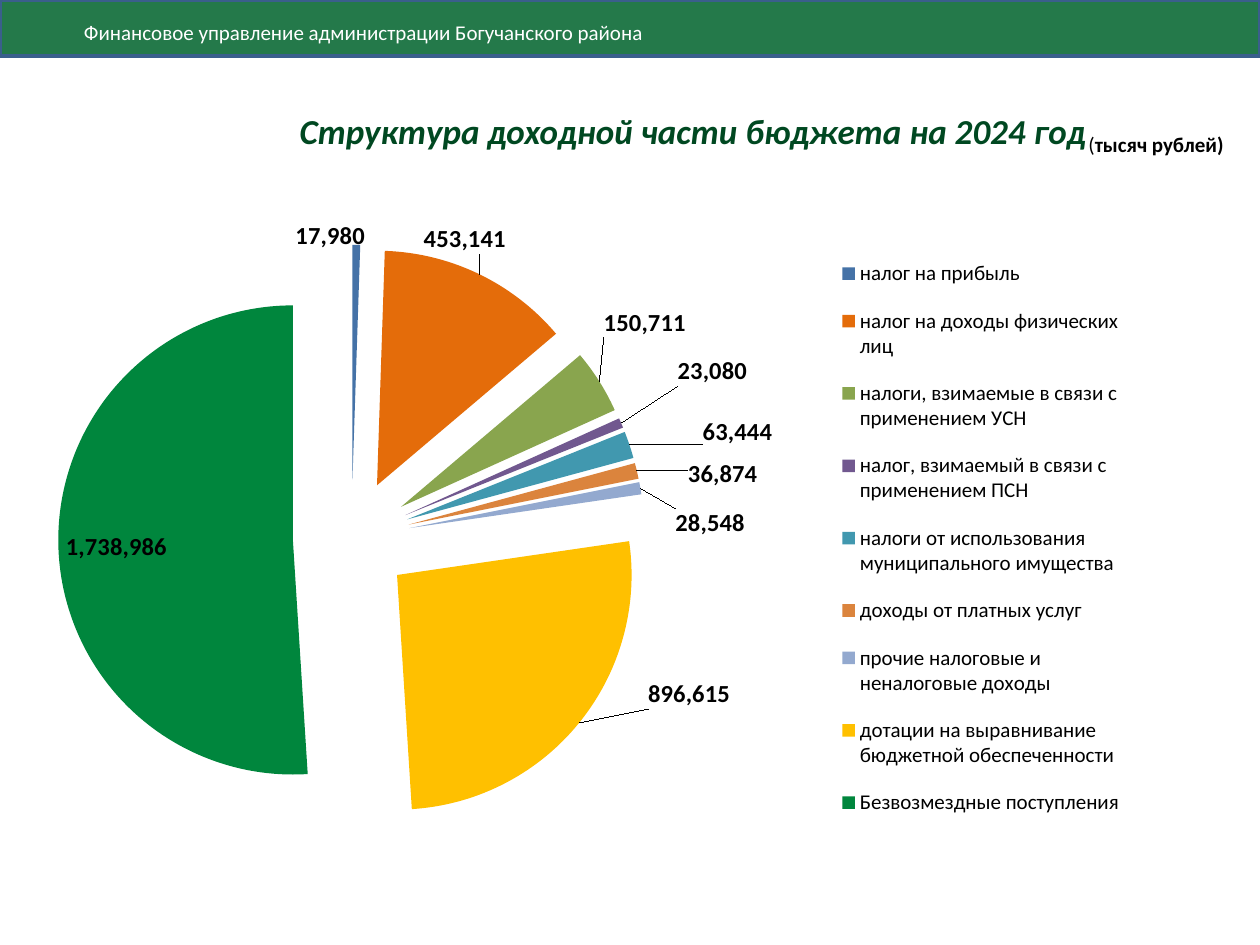
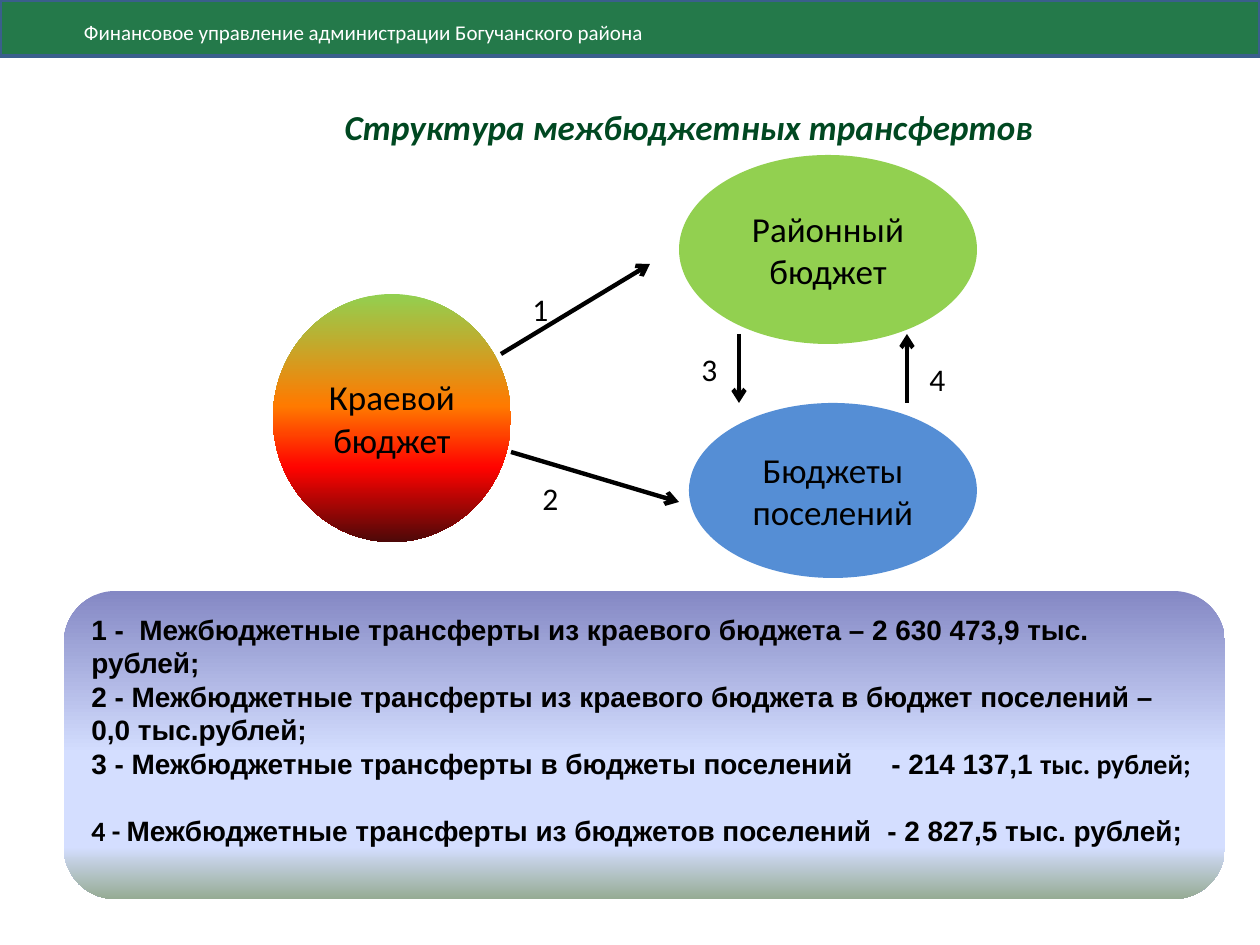
"""Build two budget slides: the revenue pie and the transfer diagram."""
from typing import NamedTuple

from lxml import etree
from pptx import Presentation
from pptx import util as u
from pptx.chart.data import CategoryChartData
from pptx.dml.color import RGBColor
from pptx.enum import chart as charts, shapes, text
from pptx.oxml import parse_xml
from pptx.oxml.ns import nsdecls, qn

PX = 914400 / 126
PAGE_SIZE = (1260, 945)
CALIBRI, ARIAL = "Calibri", "Arial"
BLACK, WHITE = "000000", "FFFFFF"
BAND_GREEN, BAND_EDGE, TITLE_GREEN = "00642D", "3A5F8C", "004821"
CENTER, LEFT = text.PP_ALIGN.CENTER, text.PP_ALIGN.LEFT
TOP, MIDDLE = text.MSO_ANCHOR.TOP, text.MSO_ANCHOR.MIDDLE
Stops = list[tuple[int, str]]

BODY = {"name": CALIBRI, "size": u.Pt(20), "color": BLACK}
TITLE = {**BODY, "color": TITLE_GREEN, "bold": True, "italic": True}
BAND_TEXT = {**BODY, "size": u.Pt(12), "color": WHITE}
NUMBER = {**BODY, "size": u.Pt(18)}
UNIT = {**BODY, "size": u.Pt(12)}
UNIT_BOLD = {**UNIT, "bold": True}
VALUE = {**BODY, "size": u.Pt(14), "bold": True}
NOTE = {**BODY, "name": ARIAL, "size": u.Pt(16), "bold": True}
NOTE_CALIBRI = {**NOTE, "name": CALIBRI}


class Box(NamedTuple):
    """A rectangle in px."""
    left: int
    top: int
    width: int
    height: int


class Span(NamedTuple):
    """A run of text with its format values."""
    words: str
    style: dict


class Para(NamedTuple):
    """A paragraph with an optional tab stop in px and space before in pt."""
    spans: list[Span]
    tab: int = 0
    before: int = 0


class Revenue(NamedTuple):
    """A pie slice with the px shift of its value label."""
    name: str
    value: int
    color: str
    shift: tuple[int, int] | None = None


class Budget(NamedTuple):
    """An ellipse that stands for one budget level."""
    words: str
    box: Box
    fill: str | Stops


class Transfer(NamedTuple):
    """A numbered arrow between two budgets."""
    number: str
    label_at: tuple[int, int]
    start: tuple[int, int]
    end: tuple[int, int]


REVENUES = [
    Revenue("налог на прибыль", 17980, "4572A7", (-26, -31)),
    Revenue("налог на доходы физических лиц", 453141, "E46C0A", (30, -57)),
    Revenue("налоги, взимаемые в связи с применением УСН", 150711, "89A54E", (93, -78)),
    Revenue("налог, взимаемый в связи с применением ПСН", 23080, "71588F", (133, -70)),
    Revenue("налоги от использования муниципального имущества", 63444, "4198AF", (150, -30)),
    Revenue("доходы от платных услуг", 36874, "DB843D", (128, -14)),
    Revenue("прочие налоговые и неналоговые доходы", 28548, "93A9CF", (112, 19)),
    Revenue("дотации на выравнивание бюджетной обеспеченности", 896615, "FFC000", (157, -9)),
    Revenue("Безвозмездные поступления", 1738986, "00863D"),
]
BUDGETS = [
    Budget("Краевой бюджет", Box(273, 294, 238, 248),
           [(0, "92D050"), (45, "FF7A00"), (70, "FF0300"), (100, "4D0808")]),
    Budget("Районный бюджет", Box(679, 155, 298, 189), "92D050"),
    Budget("Бюджеты поселений", Box(689, 403, 288, 175), "558ED5"),
]
TRANSFERS = [
    Transfer("1", (520, 284), (501, 354), (650, 264)),
    Transfer("2", (530, 473), (511, 452), (679, 502)),
    Transfer("3", (689, 344), (739, 334), (739, 403)),
    Transfer("4", (917, 354), (907, 403), (907, 334)),
]
PANEL_FILL = [(0, "8488C4"), (53, "D4DEFF"), (83, "D4DEFF"), (100, "96AB94")]
NOTES = [
    Para([Span("1 -\tМежбюджетные трансферты из краевого бюджета – 2 630 473,9 тыс. рублей;", NOTE)], tab=48),
    Para([Span("2 - Межбюджетные трансферты из краевого бюджета в бюджет поселений – "
               "0,0 тыс.рублей;", NOTE)]),
    Para([Span("3 - Межбюджетные трансферты в бюджеты поселений\t- 214 137,1 ", NOTE),
          Span("тыс. рублей;", NOTE_CALIBRI)], tab=800),
    Para([Span("4 - ", NOTE_CALIBRI),
          Span("Межбюджетные трансферты из бюджетов поселений\t- 2 827,5 тыс. рублей;", NOTE)],
         tab=796, before=19),
]


def px(length: float) -> u.Emu:
    """Turn px into EMU."""
    return u.Emu(round(length * PX))


def rgb(value: str) -> RGBColor:
    """Turn a hex string into a colour."""
    return RGBColor.from_string(value)


def apply_font(font, style: dict) -> None:
    """Set font attributes from format values."""
    for key, value in style.items():
        if key == "color":
            font.color.rgb = rgb(value)
        else:
            setattr(font, key, value)


def write(shape, paras: list[Para], align=LEFT, anchor=TOP) -> None:
    """Fill a shape with wrapped paragraphs."""
    frame = shape.text_frame
    frame.word_wrap = True
    frame.vertical_anchor = anchor
    for index, para in enumerate(paras):
        line = frame.add_paragraph() if index else frame.paragraphs[0]
        line.alignment = align
        if para.before:
            line.space_before = u.Pt(para.before)
        if para.tab:
            tabs = etree.SubElement(line._p.get_or_add_pPr(), qn("a:tabLst"))
            etree.SubElement(tabs, qn("a:tab"), pos=str(px(para.tab)), algn="l")
        for span in para.spans:
            run = line.add_run()
            run.text = span.words
            apply_font(run.font, span.style)


def add_text(page, box: Box, spans: list[Span], align=LEFT, anchor=TOP) -> None:
    """Add a text box with one paragraph."""
    shape = page.shapes.add_textbox(*map(px, box))
    write(shape, [Para(spans)], align, anchor)


def add_shape(page, kind, box: Box, fill: str | Stops):
    """Add an unlined shape with a solid or vertical gradient fill."""
    shape = page.shapes.add_shape(kind, *map(px, box))
    shape.shadow.inherit = False
    shape.line.fill.background()
    if isinstance(fill, str):
        shape.fill.solid()
        shape.fill.fore_color.rgb = rgb(fill)
        return shape
    shape.fill.gradient()
    shape.fill.gradient_angle = 270
    stops = shape.element.xpath(".//a:gsLst")[0]
    for stop in list(stops):
        stops.remove(stop)
    for percent, color in fill:
        stop = etree.SubElement(stops, qn("a:gs"), pos=str(percent * 1000))
        etree.SubElement(stop, qn("a:srgbClr"), val=color)
    return shape


def add_page(deck, title: str, title_box: Box):
    """Add a blank slide with the green band and a title."""
    page = deck.slides.add_slide(deck.slide_layouts[6])
    band = add_shape(page, shapes.MSO_SHAPE.RECTANGLE, Box(0, 0, 1260, 56), BAND_GREEN)
    color = band.element.xpath("./p:spPr/a:solidFill/a:srgbClr")[0]
    etree.SubElement(color, qn("a:alpha"), val="86000")
    band.line.color.rgb = rgb(BAND_EDGE)
    band.line.width = u.Pt(2)
    band.text_frame.margin_left = px(84)
    band.text_frame.margin_top = px(15)
    write(band, [Para([Span("Финансовое управление администрации Богучанского района", BAND_TEXT)])],
          anchor=MIDDLE)
    add_text(page, title_box, [Span(title, TITLE)], CENTER, MIDDLE)
    return page


def manual_layout(target: str | None = None, modes: bool = True, **values: float):
    """Make a chart layout element from fractions of the chart."""
    parts = f'<c:layoutTarget val="{target}"/>' if target else ""
    if modes:
        parts += '<c:xMode val="edge"/><c:yMode val="edge"/>'
    parts += "".join(f'<c:{key} val="{value:.4f}"/>' for key, value in values.items())
    return parse_xml(f'<c:layout {nsdecls("c")}><c:manualLayout>{parts}</c:manualLayout></c:layout>')


def add_revenue_pie(page, box: Box) -> None:
    """Draw the exploded pie with its value labels and legend."""
    data = CategoryChartData(number_format="#,##0")
    data.categories = [revenue.name for revenue in REVENUES]
    data.add_series("Series 1", [revenue.value for revenue in REVENUES])
    chart = page.shapes.add_chart(charts.XL_CHART_TYPE.PIE, *map(px, box), data).chart
    apply_font(chart.font, NUMBER)
    chart.has_title = False
    chart.has_legend = True
    chart.legend.position = charts.XL_LEGEND_POSITION.RIGHT
    chart.legend.include_in_layout = False
    apply_font(chart.legend.font, UNIT)
    chart.plots[0].vary_by_categories = True
    series = chart.plots[0].series[0]
    inside = charts.XL_LABEL_POSITION.INSIDE_END
    labels = series.data_labels
    for key, value in {"show_value": True, "number_format": "#,##0",
                       "number_format_is_linked": False, "position": inside}.items():
        setattr(labels, key, value)
    apply_font(labels.font, VALUE)
    for index, revenue in enumerate(REVENUES):
        point = series.points[index]
        point.format.fill.solid()
        point.format.fill.fore_color.rgb = rgb(revenue.color)
        if revenue.shift:
            apply_font(point.data_label.font, VALUE)
            point.data_label.position = inside
            label = chart.element.xpath(f".//c:dLbl[c:idx/@val='{index}']")[0]
            across, down = revenue.shift
            label.insert(1, manual_layout(modes=False, x=across / box.width, y=down / box.height))
    explosion = parse_xml(f'<c:explosion {nsdecls("c")} val="25"/>')
    chart.element.xpath(".//c:ser/c:dPt")[0].addprevious(explosion)
    plot = chart.element.xpath(".//c:plotArea")[0]
    for layout in chart.element.xpath(".//c:plotArea/c:layout | .//c:legend/c:layout"):
        layout.getparent().remove(layout)
    plot.insert(0, manual_layout("inner", x=0, y=0.04, w=0.62, h=0.94))
    position = chart.element.xpath(".//c:legend/c:legendPos")[0]
    position.addnext(manual_layout(x=0.73, y=0.03, w=0.27, h=0.96))


def add_transfer(page, transfer: Transfer) -> None:
    """Draw a numbered arrow."""
    arrow = page.shapes.add_connector(
        shapes.MSO_CONNECTOR.STRAIGHT, *map(px, transfer.start + transfer.end))
    arrow.line.color.rgb = rgb(BLACK)
    arrow.line.width = u.Pt(2.5)
    etree.SubElement(arrow.line._get_or_add_ln(), qn("a:tailEnd"), type="arrow")
    etree.SubElement(arrow.element.spPr, qn("a:effectLst"))
    add_text(page, Box(*transfer.label_at, 39, 50), [Span(transfer.number, NUMBER)])


def build_revenue_page(deck) -> None:
    """Build the revenue structure slide."""
    page = add_page(deck, "Структура доходной части бюджета на 2024 год", Box(126, 86, 1134, 90))
    add_revenue_pie(page, Box(0, 220, 1134, 624))
    add_text(page, Box(1076, 125, 184, 38), [Span("(", UNIT), Span("тысяч рублей)", UNIT_BOLD)])


def build_transfer_page(deck) -> None:
    """Build the transfer structure slide."""
    page = add_page(deck, "Структура межбюджетных трансфертов", Box(122, 86, 1134, 80))
    for budget in BUDGETS:
        oval = add_shape(page, shapes.MSO_SHAPE.OVAL, budget.box, budget.fill)
        write(oval, [Para([Span(budget.words, BODY)])], CENTER, MIDDLE)
    for transfer in TRANSFERS:
        add_transfer(page, transfer)
    panel = add_shape(page, shapes.MSO_SHAPE.ROUNDED_RECTANGLE, Box(64, 591, 1161, 308), PANEL_FILL)
    write(panel, NOTES)


def main() -> None:
    """Build and save the deck."""
    deck = Presentation()
    deck.slide_width, deck.slide_height = map(px, PAGE_SIZE)
    build_revenue_page(deck)
    build_transfer_page(deck)
    deck.save("out.pptx")


if __name__ == "__main__":
    main()
